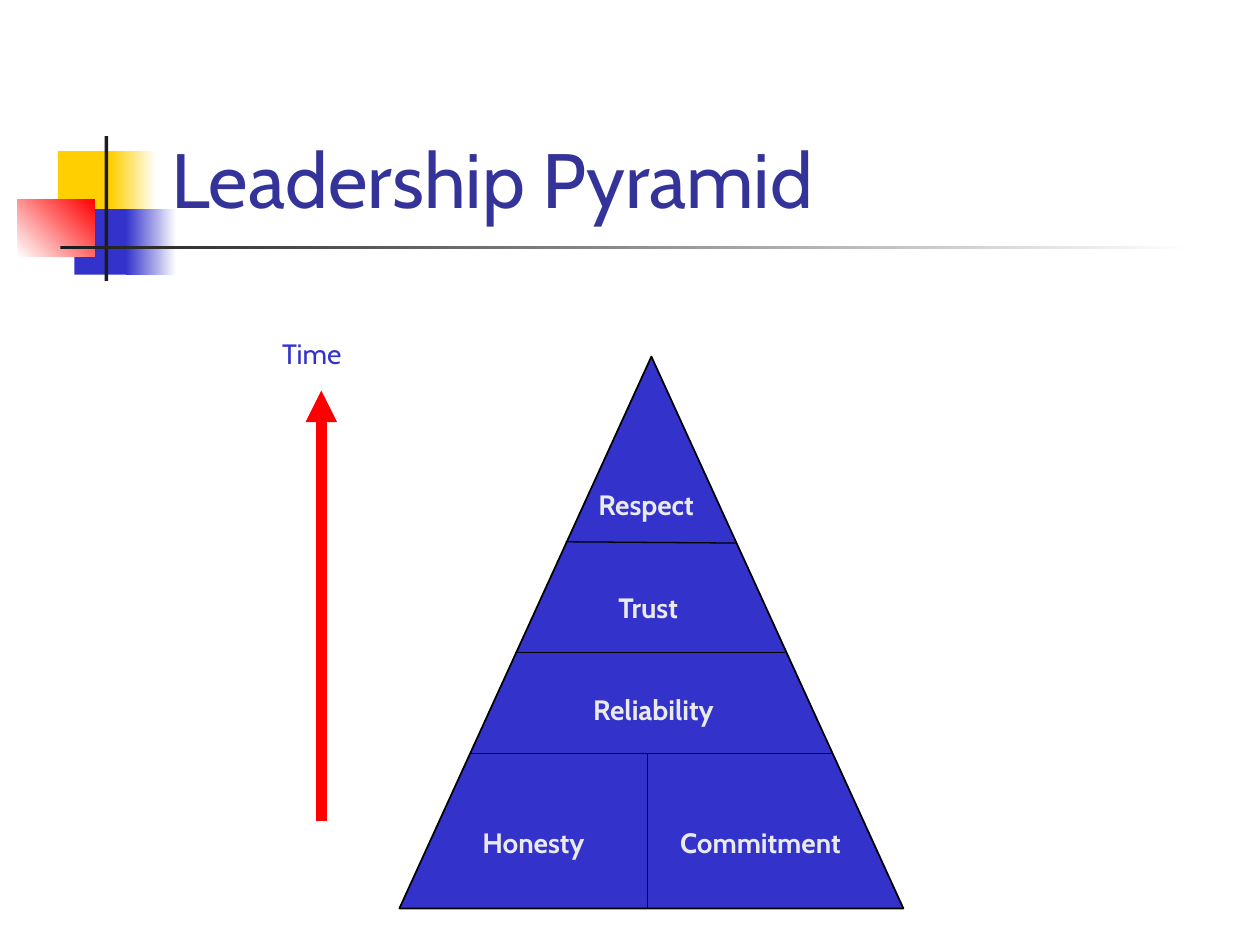
from lxml import etree
from pptx import Presentation
from pptx import util as u
from pptx.dml.color import RGBColor
from pptx.enum import shapes, text
from pptx.oxml.ns import qn

COLORS = {
    "yellow": "FFCF01", "blue": "3333CC", "red": "FF0000", "white": "FFFFFF",
    "dark": "1C1C1C", "title": "333399", "label": "EAEAEA", "black": "000000",
}


def rgb(name):
    return RGBColor.from_string(COLORS[name])


class Deck:
    """Holds the font and the current slide, and draws each kind of element."""

    def __init__(self, width, height, font):
        self.prs = Presentation()
        self.prs.slide_width = u.Inches(width)
        self.prs.slide_height = u.Inches(height)
        self.font = font
        self.s = self.prs.slides.add_slide(self.prs.slide_layouts[6])

    def shape(self, box, fill, end=None, angle=0, line=None,
              kind=shapes.MSO_SHAPE.RECTANGLE):
        sp = self.s.shapes.add_shape(kind, *map(u.Inches, box))
        sp.shadow.inherit = False
        if end:
            sp.fill.gradient()
            sp.fill.gradient_angle = angle
            for stop, color in zip(sp.fill.gradient_stops, (fill, end)):
                stop.color.rgb = rgb(color)
        else:
            sp.fill.solid()
            sp.fill.fore_color.rgb = rgb(fill)
        if line:
            sp.line.color.rgb = rgb(line)
            sp.line.width = u.Pt(1)
        else:
            sp.line.fill.background()

    def line(self, x1, y1, x2, y2, color="black", width=0.75, arrow=False):
        sp = self.s.shapes.add_connector(
            shapes.MSO_CONNECTOR.STRAIGHT, *map(u.Inches, (x1, y1, x2, y2)))
        sp.line.color.rgb = rgb(color)
        sp.line.width = u.Pt(width)
        if arrow:
            etree.SubElement(sp.line._get_or_add_ln(), qn("a:tailEnd"), type="triangle")
        etree.SubElement(sp._element.spPr, qn("a:effectLst"))

    def text(self, box, words, color="label", size=16, bold=True, title=False):
        sp = self.s.shapes.add_textbox(*map(u.Inches, box))
        tf = sp.text_frame
        tf.text = words
        tf.word_wrap = title
        if title:
            tf.auto_size = text.MSO_AUTO_SIZE.NONE
            tf.vertical_anchor = text.MSO_ANCHOR.BOTTOM
        else:
            tf.auto_size = text.MSO_AUTO_SIZE.SHAPE_TO_FIT_TEXT
        r = tf.paragraphs[0].runs[0]
        r.font.name = self.font
        r.font.size = u.Pt(size)
        r.font.bold = bold
        r.font.color.rgb = rgb(color)


def main():
    deck = Deck(10, 7.5, "Cabin")

    deck.shape((0.46, 1.2, 0.48, 0.52), "yellow")
    deck.shape((0.88, 1.2, 0.36, 0.52), "yellow", "white")
    deck.shape((0.59, 1.66, 0.46, 0.52), "blue")
    deck.shape((1, 1.66, 0.4, 0.52), "blue", "white")
    deck.shape((0.14, 1.58, 0.61, 0.46), "white", "red", angle=45)
    deck.shape((0.83, 1.08, 0.03, 1.15), "dark")
    deck.shape((0.48, 1.95, 9, 0.03), "dark", "white")
    deck.text((1.26, 0.23, 8.52, 1.6), "Leadership Pyramid", "title", 44,
              bold=False, title=True)

    deck.shape((3.17, 2.83, 4, 4.38), "blue", line="black",
               kind=shapes.MSO_SHAPE.ISOSCELES_TRIANGLE)
    for divider in [(4.09, 5.18, 6.23, 5.18), (3.73, 5.98, 6.6, 5.98),
                    (5.14, 5.98, 5.14, 7.21), (4.49, 4.3, 5.84, 4.31),
                    (4.39, 5.18, 5.98, 5.18)]:
        deck.line(*divider)

    deck.line(2.55, 6.52, 2.55, 3.1, "red", 6, arrow=True)
    deck.text((2.14, 2.62, 0.69, 0.37), "Time", "blue", bold=False)

    for left, top, width, words in [
            (4.65, 3.82, 1.09, "Respect"), (4.81, 4.64, 0.78, "Trust"),
            (4.61, 5.45, 1.33, "Reliability"), (3.73, 6.5, 1.12, "Honesty"),
            (5.3, 6.5, 1.65, "Commitment")]:
        deck.text((left, top, width, 0.37), words)

    deck.prs.save("out.pptx")


if __name__ == "__main__":
    main()
